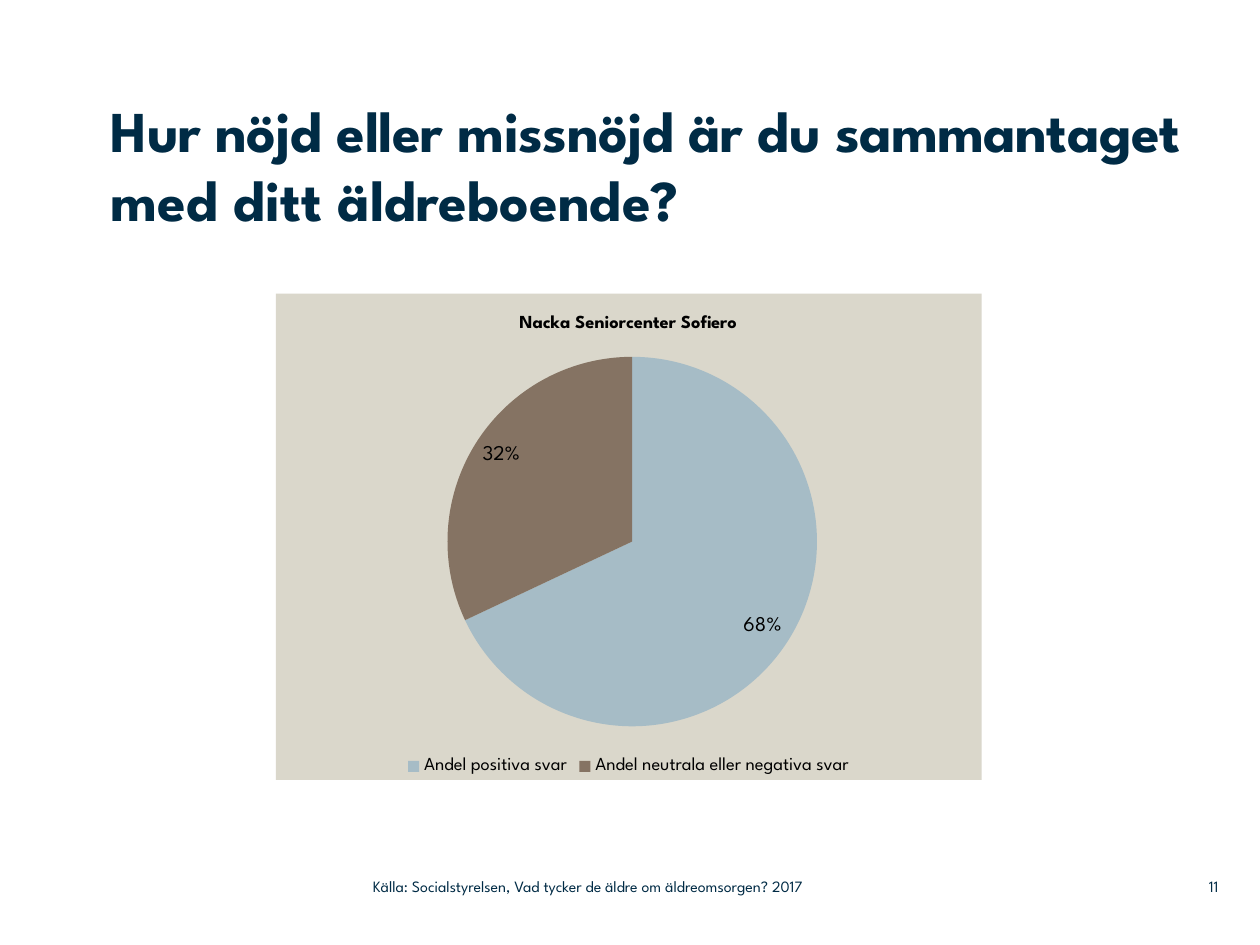
from lxml import etree
from pptx import Presentation
from pptx.chart.data import CategoryChartData
from pptx.dml.color import RGBColor
from pptx.enum.chart import XL_CHART_TYPE, XL_LABEL_POSITION, XL_LEGEND_POSITION
from pptx.enum.text import MSO_ANCHOR, PP_ALIGN
from pptx.oxml import parse_xml
from pptx.oxml.ns import nsdecls
from pptx.util import Pt

PIE = XL_CHART_TYPE.PIE
INSIDE_END = XL_LABEL_POSITION.INSIDE_END
BOTTOM = XL_LEGEND_POSITION.BOTTOM
TOP, MIDDLE = MSO_ANCHOR.TOP, MSO_ANCHOR.MIDDLE
LEFT, RIGHT = PP_ALIGN.LEFT, PP_ALIGN.RIGHT

FONT = "League Spartan"
NAVY, BLACK, BEIGE = "002B45", "000000", "DAD7CB"
ANSWERS = [
    ("Andel positiva svar", 68, "A6BCC6"),
    ("Andel neutrala eller negativa svar", 32, "857363"),
]


def rgb(value):
    return RGBColor.from_string(value)


def style_font(font, size, color, bold=False):
    font.name = FONT
    font.size = Pt(size)
    font.bold = bold
    font.color.rgb = rgb(color)


def prepare_frame(tf, anchor):
    tf.word_wrap = True
    tf.vertical_anchor = anchor
    tf.margin_left = tf.margin_top = tf.margin_right = tf.margin_bottom = 0


def add_title(slide):
    s = slide.shapes.title
    s.left, s.top, s.width, s.height = Pt(63.4), Pt(54), Pt(635.8), Pt(102.2)
    prepare_frame(s.text_frame, TOP)
    p = s.text_frame.paragraphs[0]
    p.alignment = LEFT
    p.line_spacing = Pt(39.5)
    r = p.add_run()
    r.text = "Hur nöjd eller missnöjd är du sammantaget "
    r.font._element.set("spc", "-30")
    p.add_run().text = "med ditt äldreboende?"
    style_font(p.font, 33, NAVY, bold=True)


def add_footer_text(slide, text, left, width, align):
    tf = slide.shapes.add_textbox(Pt(left), Pt(496), Pt(width), Pt(21)).text_frame
    prepare_frame(tf, MIDDLE)
    p = tf.paragraphs[0]
    p.text = text
    p.alignment = align
    style_font(p.font, 9, NAVY)


def set_chart_background(chart, color):
    chart._chartSpace.find("{*}chart").addnext(parse_xml(
        f'<c:spPr {nsdecls("c", "a")}><a:solidFill><a:srgbClr val="{color}"/>'
        '</a:solidFill><a:ln><a:noFill/></a:ln></c:spPr>'))


def set_plot_layout(chart, **fractions):
    """Place the inner plot area by fractions of the chart: x, y, w, h."""
    plot_area = chart._chartSpace.find(".//{*}plotArea")
    old = plot_area.find("{*}layout")
    if old is not None:
        plot_area.remove(old)
    layout = parse_xml(
        f'<c:layout {nsdecls("c")}><c:manualLayout><c:layoutTarget val="inner"/>'
        '<c:xMode val="edge"/><c:yMode val="edge"/></c:manualLayout></c:layout>')
    for name, value in fractions.items():
        tag = etree.QName(layout).namespace
        etree.SubElement(layout[0], f"{{{tag}}}{name}").set("val", str(value))
    plot_area.insert(0, layout)


def add_answer_pie(slide):
    data = CategoryChartData()
    data.categories = [name for name, _, _ in ANSWERS]
    data.add_series("Series 1", [value for _, value, _ in ANSWERS])
    chart = slide.shapes.add_chart(
        PIE, Pt(157.7), Pt(167.8), Pt(403.2), Pt(277.9), data).chart
    style_font(chart.font, 18, BLACK)
    set_chart_background(chart, BEIGE)
    set_plot_layout(chart, x=0.24, y=0.13, w=0.53, h=0.76)

    p = chart.chart_title.text_frame.paragraphs[0]
    p.text = "Nacka Seniorcenter Sofiero"
    style_font(p.font, 10.5, BLACK, bold=True)
    chart.chart_title.include_in_layout = False

    chart.has_legend = True
    chart.legend.position = BOTTOM
    chart.legend.include_in_layout = False
    style_font(chart.legend.font, 10.5, BLACK)

    plot = chart.plots[0]
    plot.vary_by_categories = True
    for i, (_, _, color) in enumerate(ANSWERS):
        fmt = plot.series[0].points[i].format
        fmt.fill.solid()
        fmt.fill.fore_color.rgb = rgb(color)
        fmt.line.fill.background()

    plot.has_data_labels = True
    labels = plot.data_labels
    labels.show_percentage = True
    labels.show_value = False
    labels.number_format = "0%"
    labels.number_format_is_linked = False
    labels.position = INSIDE_END
    style_font(labels.font, 12, BLACK)


def main():
    prs = Presentation()
    prs.slide_width, prs.slide_height = Pt(720), Pt(540)
    slide = prs.slides.add_slide(prs.slide_layouts[5])
    add_footer_text(slide, "11", 662.4, 33.8, RIGHT)
    add_footer_text(
        slide, "Källa: Socialstyrelsen, Vad tycker de äldre om äldreomsorgen? 2017",
        213.1, 319, LEFT)
    add_title(slide)
    add_answer_pie(slide)
    prs.save("out.pptx")


if __name__ == "__main__":
    main()
